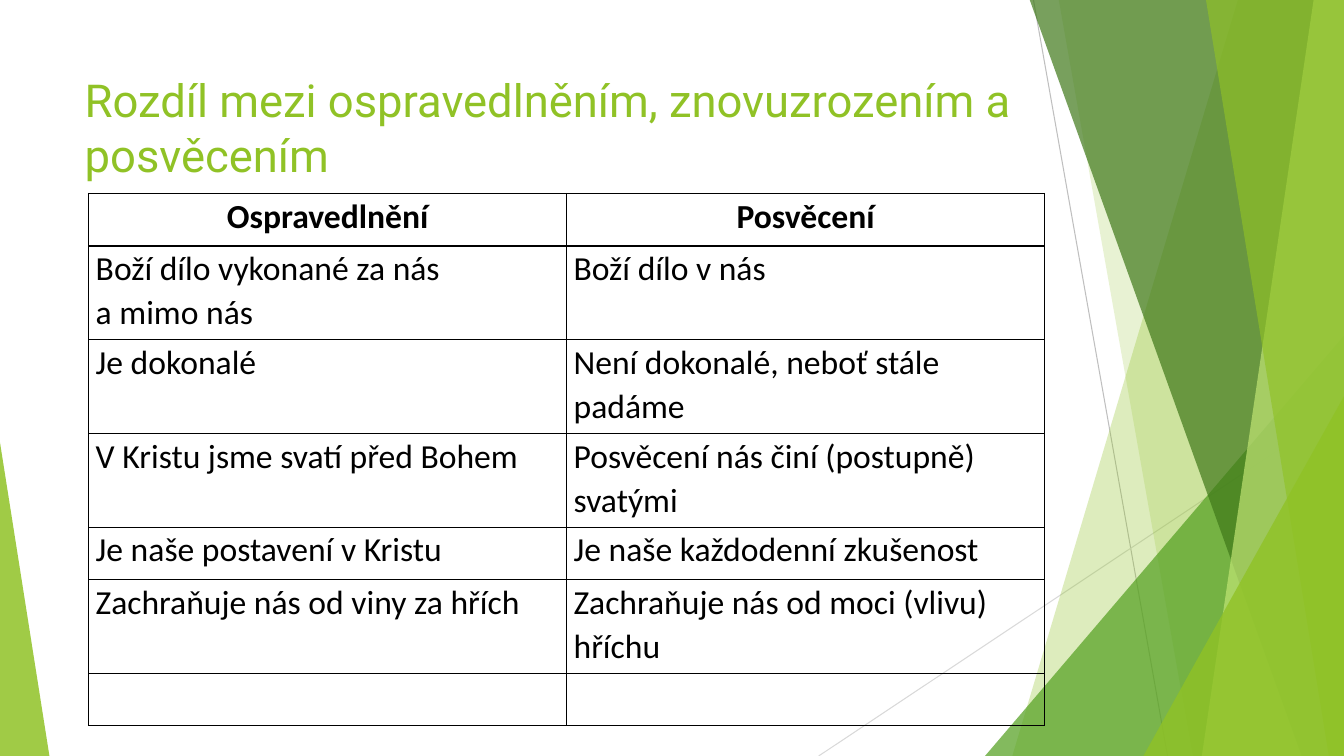
import lxml.etree
import pptx
import pptx.dml.color
import pptx.enum.shapes
import pptx.enum.text
import pptx.oxml
import pptx.oxml.ns
import pptx.util
from dataclasses import dataclass

Inches = pptx.util.Inches
Pt = pptx.util.Pt
qn = pptx.oxml.ns.qn


@dataclass(frozen=True)
class Theme:
    green: str = "90C226"
    leaf: str = "54A021"
    forest: str = "3F7819"
    lime: str = "C0E474"
    grey: str = "BFBFBF"
    light_grey: str = "D9D9D9"
    black: str = "000000"
    title_font: str = "Roboto"
    body_font: str = "Calibri"
    title_size: float = 32.4
    body_size: float = 24


THEME = Theme()
WIDTH, HEIGHT = 13.33, 7.5
TOP = -0.01

TITLE = "Rozdíl mezi ospravedlněním, znovuzrozením a posvěcením"
ROWS = [
    (0.52, "Ospravedlnění", "Posvěcení"),
    (0.93, "Boží dílo vykonané za nás\na mimo nás", "Boží dílo v nás"),
    (0.93, "Je dokonalé", "Není dokonalé, neboť stále padáme"),
    (0.93, "V Kristu jsme svatí před Bohem", "Posvěcení nás činí (postupně) svatými"),
    (0.52, "Je naše postavení v Kristu", "Je naše každodenní zkušenost"),
    (0.93, "Zachraňuje nás od viny za hřích", "Zachraňuje nás od moci (vlivu) hříchu"),
    (0.52, "", ""),
]


def rgb(color):
    return pptx.dml.color.RGBColor.from_string(color)


def style_shape(sp, color, opacity):
    """Flat, partly transparent fill without outline."""
    sp.shadow.inherit = False
    sp.line.fill.background()
    sp.fill.solid()
    sp.fill.fore_color.rgb = rgb(color)
    clr = sp.fill._xPr.find(qn("a:solidFill"))[0]
    lxml.etree.SubElement(clr, qn("a:alpha")).set("val", str(opacity * 1000))


def add_line(s, start, end, color):
    line = s.shapes.add_connector(
        pptx.enum.shapes.MSO_CONNECTOR.STRAIGHT,
        *(Inches(v) for v in start + end))
    line.line.color.rgb = rgb(color)
    line.line.width = Pt(0.75)
    lxml.etree.SubElement(line._element.spPr, qn("a:effectLst"))


def add_band(s, top_x, bottom_x, color, opacity):
    """Band from a slanted left edge to the right side of the slide."""
    corners = [(top_x, TOP), (WIDTH, TOP), (WIDTH, HEIGHT), (bottom_x, HEIGHT)]
    points = [(Inches(x), Inches(y)) for x, y in corners]
    builder = s.shapes.build_freeform(*points[0])
    builder.add_line_segments(points[1:], close=True)
    style_shape(builder.convert_to_shape(), color, opacity)


def add_triangle(s, left, top, width, apex, color, opacity):
    """Triangle standing on the bottom edge of the slide."""
    sp = s.shapes.add_shape(
        pptx.enum.shapes.MSO_SHAPE.ISOSCELES_TRIANGLE,
        Inches(left), Inches(top), Inches(width), Inches(HEIGHT - top))
    sp.adjustments[0] = apex
    style_shape(sp, color, opacity)


def format_run(r, font, size, color, bold=False):
    r.font.name = font
    r.font.size = Pt(size)
    r.font.color.rgb = rgb(color)
    r.font.bold = bold


def add_title(s, text):
    title = s.shapes.title
    title.left, title.top = Inches(0.74), Inches(0.67)
    title.width, title.height = Inches(9.4), Inches(1.44)
    tf = title.text_frame
    tf.text = text
    tf.word_wrap = True
    tf.auto_size = pptx.enum.text.MSO_AUTO_SIZE.NONE
    tf.vertical_anchor = pptx.enum.text.MSO_ANCHOR.TOP
    p = tf.paragraphs[0]
    p.alignment = pptx.enum.text.PP_ALIGN.LEFT
    p.line_spacing = 1.0
    format_run(p.runs[0], THEME.title_font, THEME.title_size, THEME.green)
    # Bring the title in front of the decoration
    s.shapes._spTree.append(title._element)


def set_borders(cell):
    tc_pr = cell._tc.get_or_add_tcPr()
    for index, side in enumerate(("lnL", "lnR", "lnT", "lnB")):
        ln = pptx.oxml.parse_xml(
            f'<a:{side} xmlns:a="http://schemas.openxmlformats.org/drawingml/2006/main"'
            f' w="{Pt(1)}"><a:solidFill><a:srgbClr val="{THEME.black}"/>'
            f'</a:solidFill></a:{side}>')
        tc_pr.insert(index, ln)


def fill_cell(cell, text, header):
    cell.fill.background()
    cell.margin_left = cell.margin_right = Inches(0.07)
    cell.margin_top = cell.margin_bottom = 0
    set_borders(cell)
    cell.text_frame.text = text
    for p in cell.text_frame.paragraphs:
        p.line_spacing = 1.07
        p.alignment = (pptx.enum.text.PP_ALIGN.CENTER if header
                       else pptx.enum.text.PP_ALIGN.LEFT)
        for r in p.runs:
            format_run(r, THEME.body_font, THEME.body_size, THEME.black, header)


def add_comparison(s, rows):
    frame = s.shapes.add_table(
        len(rows), 2, Inches(0.88), Inches(1.92), Inches(9.48),
        Inches(sum(row[0] for row in rows)))
    table = frame.table
    table.horz_banding = False
    table.first_row = False
    for i, (height, *texts) in enumerate(rows):
        table.rows[i].height = Inches(height)
        for j, text in enumerate(texts):
            fill_cell(table.cell(i, j), text, header=i == 0)


def add_decoration(s):
    add_line(s, (10.25, 0), (11.58, HEIGHT), THEME.grey)
    add_line(s, (WIDTH, 4.03), (8.12, HEIGHT), THEME.light_grey)
    add_band(s, 12.28, 10.04, THEME.green, 30)
    add_band(s, 10.5, 11.83, THEME.green, 20)
    add_triangle(s, 9.77, 3.33, 3.56, 1, THEME.leaf, 72)
    add_band(s, 10.21, 12.91, THEME.forest, 70)
    add_band(s, 13.03, 11.92, THEME.lime, 70)
    add_band(s, 11.96, 13.18, THEME.green, 65)
    add_triangle(s, 11.34, 3.93, 1.99, 1, THEME.green, 80)
    add_triangle(s, 0, 4.39, 0.49, 0, THEME.green, 85)


def main():
    prs = pptx.Presentation()
    prs.slide_width, prs.slide_height = Inches(WIDTH), Inches(HEIGHT)
    s = prs.slides.add_slide(prs.slide_layouts[5])
    add_decoration(s)
    add_title(s, TITLE)
    add_comparison(s, ROWS)
    prs.save("out.pptx")


if __name__ == "__main__":
    main()
